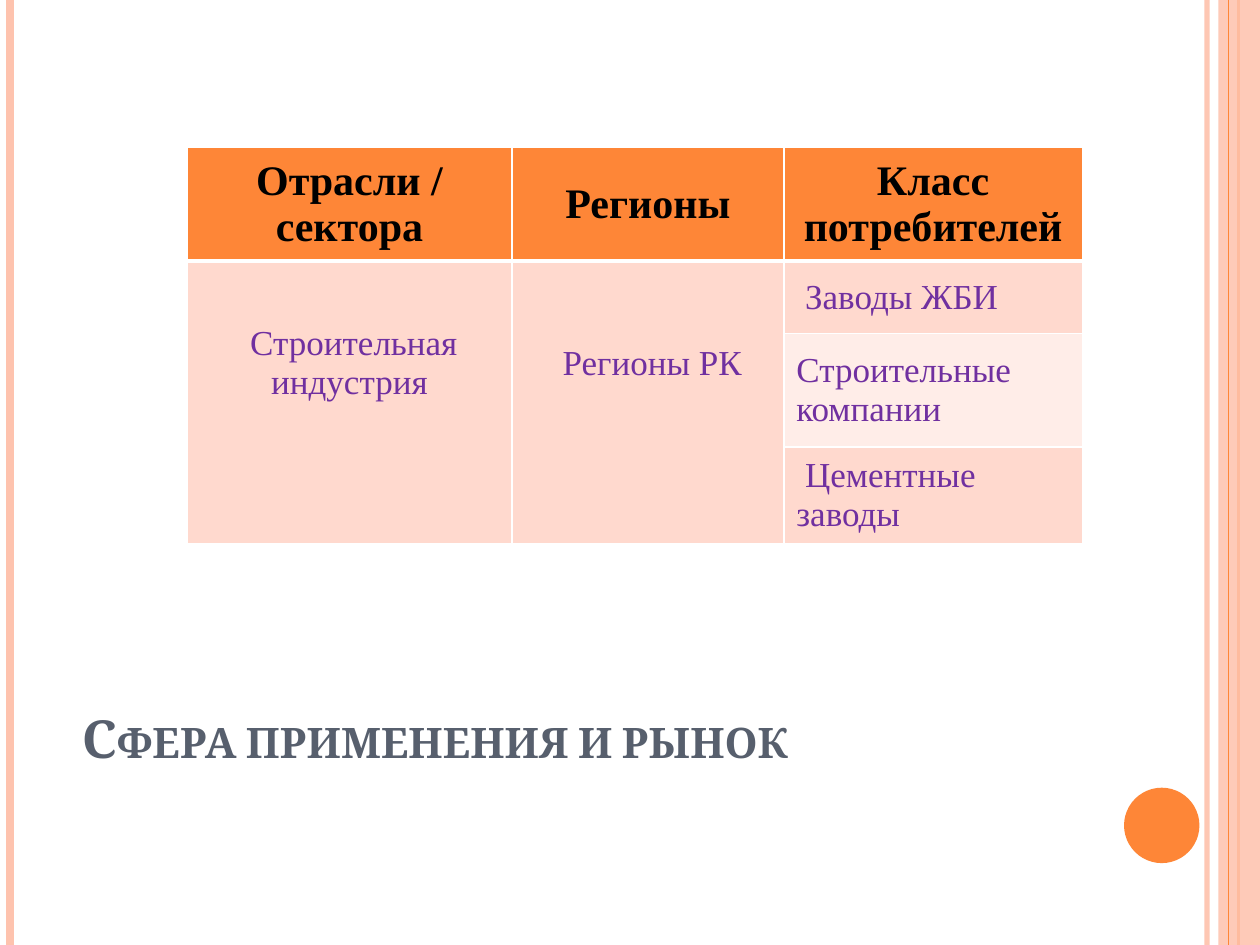
from lxml.etree import SubElement
from pptx import Presentation
from pptx.dml.color import RGBColor
from pptx.enum.shapes import MSO_CONNECTOR as Connector, MSO_SHAPE as Shape
from pptx.enum.text import MSO_ANCHOR as Anchor, PP_ALIGN as Align
from pptx.oxml.ns import qn
from pptx.util import Cm, Pt

WIDTH, HEIGHT = 25.4, 19.05
ORANGE, PEACH, WHITE = "FE8637", "FEC3AE", "FFFFFF"
BAND_DARK, BAND_LIGHT = "FFD9CE", "FFEDE8"
SLATE, PURPLE, BLACK = "575F6D", "7030A0", "000000"


def paint(color_format, hex_color):
    color_format.rgb = RGBColor.from_string(hex_color)


def set_opacity(shape, percent):
    color = next(shape.element.spPr.iter(qn("a:srgbClr")))
    SubElement(color, qn("a:alpha")).set("val", str(percent * 1000))


def set_borders(cell, **widths):
    """Draw white cell borders; widths are points by side: L, R, T, B."""
    properties = cell._tc.get_or_add_tcPr()
    for side, width in widths.items():
        border = SubElement(properties, qn(f"a:ln{side}"), w=str(Pt(width)))
        fill = SubElement(border, qn("a:solidFill"))
        SubElement(fill, qn("a:srgbClr"), val=WHITE)


class MarketSlide:
    title_font = "Cambria"
    table_font = "Times New Roman"

    def __init__(self, slide):
        self.shapes = slide.shapes

    def format_runs(self, frame, font, size, color, bold):
        for paragraph in frame.paragraphs:
            for run in paragraph.runs:
                run.font.name = font
                run.font.size = Pt(size)
                run.font.bold = bold
                paint(run.font.color, color)

    def stripe(self, x, color, width, opacity=None):
        """Draw a vertical line over the full slide height."""
        line = self.shapes.add_connector(
            Connector.STRAIGHT, Cm(x), Cm(0), Cm(x), Cm(HEIGHT))
        line.line.width = Pt(width)
        line.line.fill.solid()
        paint(line.line.fill.fore_color, color)
        SubElement(line.element.spPr, qn("a:effectLst"))
        if opacity:
            set_opacity(line, opacity)

    def solid(self, kind, x, y, width, height, color, opacity=None):
        shape = self.shapes.add_shape(kind, Cm(x), Cm(y), Cm(width), Cm(height))
        shape.shadow.inherit = False
        shape.fill.solid()
        paint(shape.fill.fore_color, color)
        shape.line.fill.background()
        if opacity:
            set_opacity(shape, opacity)

    def title(self, text, x, y, width, height):
        box = self.shapes.add_textbox(Cm(x), Cm(y), Cm(width), Cm(height))
        frame = box.text_frame
        frame.word_wrap = True
        frame.vertical_anchor = Anchor.BOTTOM
        frame.text = text
        self.format_runs(frame, self.title_font, 30, SLATE, True)
        for properties in box.element.iter(qn("a:rPr")):
            properties.set("cap", "small")

    def table(self, rows, x, y, widths, heights):
        """Build the table; a None entry continues the cell above it."""
        table = self.shapes.add_table(
            len(rows), len(widths), Cm(x), Cm(y),
            Cm(sum(widths)), Cm(sum(heights))).table
        for column, width in zip(table.columns, widths):
            column.width = Cm(width)
        for row, height in zip(table.rows, heights):
            row.height = Cm(height)
        for r, texts in enumerate(rows):
            for c, text in enumerate(texts):
                self.cell(table.cell(r, c), text, r, c == len(widths) - 1)
        for c, text in enumerate(rows[-1]):
            if text is None:
                merged = table.cell(1, c)
                merged.merge(table.cell(len(rows) - 1, c))
                merged.margin_bottom = Cm(1.7)

    def cell(self, cell, text, row, is_last_column):
        header = row == 0
        set_borders(cell, L=1, R=1, T=3 if row == 1 else 1, B=3 if header else 1)
        cell.fill.solid()
        band = BAND_DARK if row % 2 else BAND_LIGHT
        paint(cell.fill.fore_color, ORANGE if header else band)
        cell.vertical_anchor = Anchor.MIDDLE
        if text is None:
            return
        frame = cell.text_frame
        frame.text = text
        centred = header or not is_last_column
        frame.paragraphs[0].alignment = Align.CENTER if centred else Align.LEFT
        self.format_runs(frame, self.table_font, 24 if header else 20,
                         BLACK if header else PURPLE, header)


def main():
    deck = Presentation()
    deck.slide_width, deck.slide_height = Cm(WIDTH), Cm(HEIGHT)
    market = MarketSlide(deck.slides.add_slide(deck.slide_layouts[6]))

    market.stripe(24.33, PEACH, 3, opacity=93)
    market.stripe(0.2, PEACH, 4.5)
    market.stripe(24.97, ORANGE, 1.5)
    market.solid(Shape.RECTANGLE, 24.56, 0, 0.84, HEIGHT, PEACH, opacity=87)
    market.stripe(24.77, ORANGE, 0.75)
    market.solid(Shape.OVAL, 22.66, 15.88, 1.52, 1.52, ORANGE)

    market.title("Сфера применения и рынок", 1.4, 12.7, 22.73, 2.92)
    market.table(
        [["Отрасли / сектора", "Регионы", "Класс потребителей"],
         [" Строительная индустрия", " Регионы РК", " Заводы ЖБИ"],
         [None, None, "Строительные компании"],
         [None, None, " Цементные заводы"]],
        3.77, 2.97, widths=[6.55, 5.48, 6.02], heights=[2.29, 1.46, 2.29, 1.46])

    deck.save("out.pptx")


if __name__ == "__main__":
    main()
